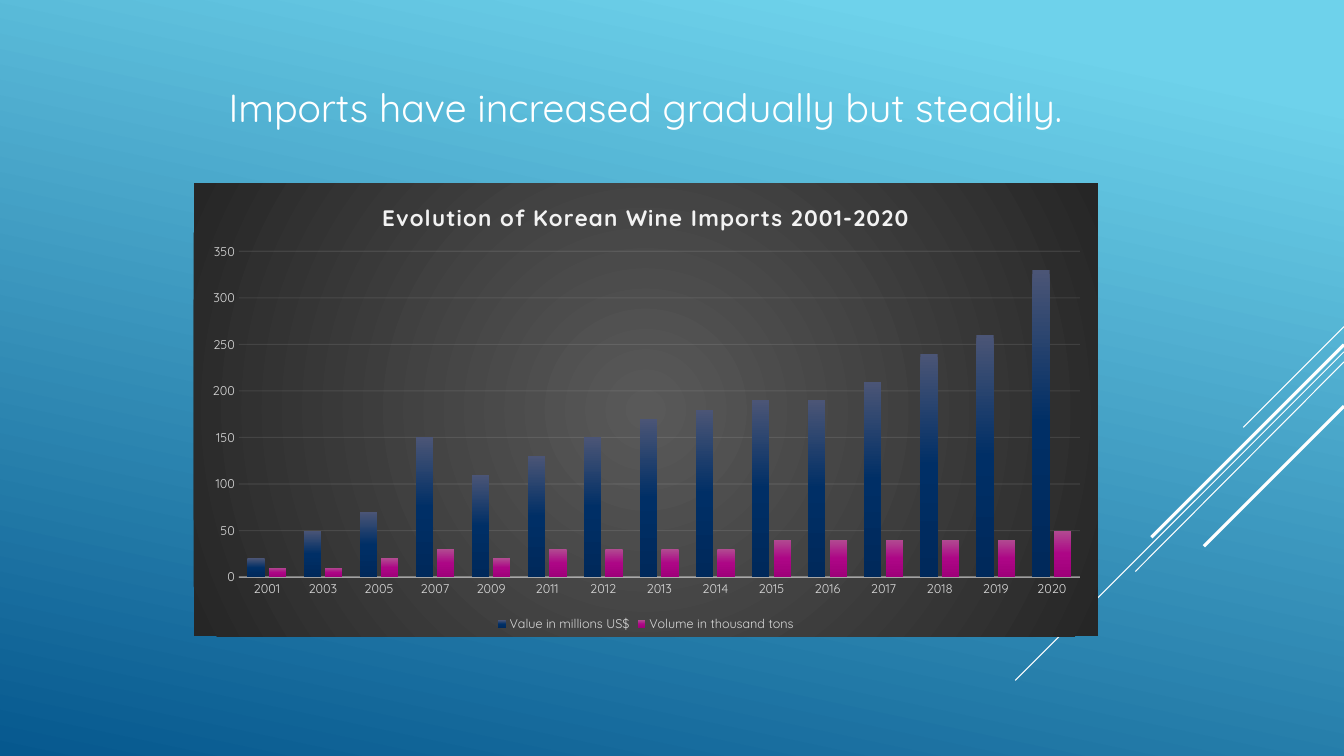
from dataclasses import dataclass

from lxml.etree import SubElement
from pptx import Presentation
from pptx.chart.data import CategoryChartData
from pptx.dml.color import RGBColor
from pptx.enum.chart import XL_CHART_TYPE as ChartType
from pptx.enum.chart import XL_LEGEND_POSITION as LegendPosition
from pptx.enum.chart import XL_TICK_MARK as TickMark
from pptx.enum.shapes import MSO_CONNECTOR as ConnectorType
from pptx.enum.text import MSO_ANCHOR as Anchor
from pptx.enum.text import MSO_AUTO_SIZE as AutoSize
from pptx.enum.text import PP_ALIGN as Align
from pptx.oxml import parse_xml
from pptx.oxml.ns import nsdecls, qn
from pptx.util import Inches, Pt


@dataclass(frozen=True)
class Theme:
    font: str = "Quicksand"
    white: str = "FFFFFF"
    pale: str = "F2F2F2"
    label: str = "D9D9D9"
    title_size: int = 28
    chart_title_size: int = 16
    chart_size: int = 10
    label_size: int = 9
    background: tuple = ((10, "6ED2EB"), (100, "06588E"))
    panel: tuple = ((0, "595959"), (100, "262626"))
    value: tuple = ((0, "4B5576"), (50, "002F66"), (100, "00295B"))
    volume: tuple = ((0, "B14B91"), (50, "AD0686"), (100, "9F007A"))


THEME = Theme()

DIAGONALS = [
    (13.33, 3.24, 12.33, 4.24, 0.75),
    (13.33, 3.49, 10.07, 6.75, 0.75),
    (13.33, 3.59, 11.26, 5.67, 0.75),
    (13.33, 3.42, 11.42, 5.33, 2.25),
    (13.33, 4.03, 11.94, 5.42, 2.25),
]
YEARS = ["2001", "2003", "2005", "2007", "2009", *map(str, range(2011, 2021))]
IMPORTS = [
    ("Value in millions US$", THEME.value,
     (20, 50, 70, 150, 110, 130, 150, 170, 180, 190, 190, 210, 240, 260, 330)),
    ("Volume in thousand tons", THEME.volume,
     (10, 10, 20, 30, 20, 30, 30, 30, 30, 40, 40, 40, 40, 40, 50)),
]


def gradient(stops, angle=None):
    if angle is None:
        direction = ('<a:path path="circle"><a:fillToRect l="50000" t="50000" '
                     'r="50000" b="50000"/></a:path>')
    else:
        direction = f'<a:lin ang="{angle * 60000}" scaled="0"/>'
    stop_list = "".join(
        f'<a:gs pos="{position * 1000}"><a:srgbClr val="{color}"/></a:gs>'
        for position, color in stops)
    return parse_xml(f'<a:gradFill {nsdecls("a")} rotWithShape="1">'
                     f'<a:gsLst>{stop_list}</a:gsLst>{direction}</a:gradFill>')


def replace_solid_fill(properties, fill):
    properties.replace(properties.find(qn("a:solidFill")), fill)


def style_font(font, size, color, bold=False):
    font.name = THEME.font
    font.size = Pt(size)
    font.bold = bold
    font.color.rgb = RGBColor.from_string(color)


def style_line(line, color, width, opacity=100):
    line.width = Pt(width)
    line.fill.solid()
    line.fill.fore_color.rgb = RGBColor.from_string(color)
    if opacity < 100:
        color_element = line._get_or_add_ln().find(".//" + qn("a:srgbClr"))
        SubElement(color_element, qn("a:alpha"), val=str(opacity * 1000))


def paint_background(slide):
    slide.background.fill.solid()
    properties = slide._element.find(".//" + qn("p:bgPr"))
    replace_solid_fill(properties, gradient(THEME.background, 102))


def add_diagonal(slide, left, top, right, bottom, width):
    line = slide.shapes.add_connector(
        ConnectorType.STRAIGHT, Inches(left), Inches(top), Inches(right), Inches(bottom))
    style_line(line.line, THEME.white, width)
    SubElement(line._element.spPr, qn("a:effectLst"))


def set_title(slide, text):
    title = slide.shapes.title
    title.left, title.top = Inches(1.71), Inches(0.77)
    title.width, title.height = Inches(9.38), Inches(0.57)
    frame = title.text_frame
    frame.word_wrap = True
    frame.auto_size = AutoSize.SHAPE_TO_FIT_TEXT
    frame.vertical_anchor = Anchor.MIDDLE
    paragraph = frame.paragraphs[0]
    paragraph.alignment = Align.CENTER
    run = paragraph.add_run()
    run.text = text
    style_font(run.font, THEME.title_size, THEME.white)


def set_chart_title(chart, text):
    chart.has_title = True
    chart.chart_title.include_in_layout = False
    run = chart.chart_title.text_frame.paragraphs[0].add_run()
    run.text = text
    style_font(run.font, THEME.chart_title_size, THEME.pale, bold=True)
    run.font._element.set("spc", "100")


def style_axes(chart):
    for axis in (chart.category_axis, chart.value_axis):
        axis.major_tick_mark = axis.minor_tick_mark = TickMark.NONE
        style_font(axis.tick_labels.font, THEME.label_size, THEME.label)
    style_line(chart.category_axis.format.line, THEME.pale, 1, 54)
    axis = chart.value_axis
    axis.minimum_scale, axis.maximum_scale, axis.major_unit = 0, 350, 50
    axis.format.line.fill.background()
    axis.has_major_gridlines = True
    style_line(axis.major_gridlines.format.line, THEME.pale, 0.75, 10)


def set_legend(chart):
    chart.has_legend = True
    chart.legend.position = LegendPosition.BOTTOM
    chart.legend.include_in_layout = False
    style_font(chart.legend.font, THEME.label_size, THEME.label)


def style_columns(chart):
    plot = chart.plots[0]
    plot.vary_by_categories = False
    plot.gap_width, plot.overlap = 100, -24
    for series, (_, stops, _) in zip(plot.series, IMPORTS):
        series.invert_if_negative = False
        series.format.fill.solid()
        replace_solid_fill(series._element.find(qn("c:spPr")), gradient(stops, 90))


def paint_chart_area(chart):
    properties = parse_xml(f'<c:spPr {nsdecls("c", "a")}><a:ln><a:noFill/></a:ln></c:spPr>')
    properties.insert(0, gradient(THEME.panel))
    chart._chartSpace.find(qn("c:chart")).addnext(properties)


def place_plot(chart, left, top, width, height):
    plot_area = chart._chartSpace.find(".//" + qn("c:plotArea"))
    for layout in plot_area.findall(qn("c:layout")):
        plot_area.remove(layout)
    plot_area.insert(0, parse_xml(
        f'<c:layout {nsdecls("c")}><c:manualLayout><c:layoutTarget val="inner"/>'
        '<c:xMode val="edge"/><c:yMode val="edge"/>'
        f'<c:x val="{left}"/><c:y val="{top}"/><c:w val="{width}"/><c:h val="{height}"/>'
        '</c:manualLayout></c:layout>'))


def add_imports_chart(slide):
    data = CategoryChartData()
    data.categories = YEARS
    for name, _, values in IMPORTS:
        data.add_series(name, values)
    chart = slide.shapes.add_chart(
        ChartType.COLUMN_CLUSTERED, Inches(1.92), Inches(1.82),
        Inches(8.97), Inches(4.49), data).chart
    style_font(chart.font, THEME.chart_size, THEME.white)
    set_chart_title(chart, "Evolution of Korean Wine Imports 2001-2020")
    style_axes(chart)
    set_legend(chart)
    style_columns(chart)
    paint_chart_area(chart)
    place_plot(chart, 0.05, 0.15, 0.93, 0.72)


def main():
    presentation = Presentation()
    presentation.slide_width, presentation.slide_height = Inches(13.33), Inches(7.5)
    slide = presentation.slides.add_slide(presentation.slide_layouts.get_by_name("Title Only"))
    paint_background(slide)
    for diagonal in DIAGONALS:
        add_diagonal(slide, *diagonal)
    set_title(slide, "Imports have increased gradually but steadily.")
    add_imports_chart(slide)
    presentation.save("out.pptx")


if __name__ == "__main__":
    main()
